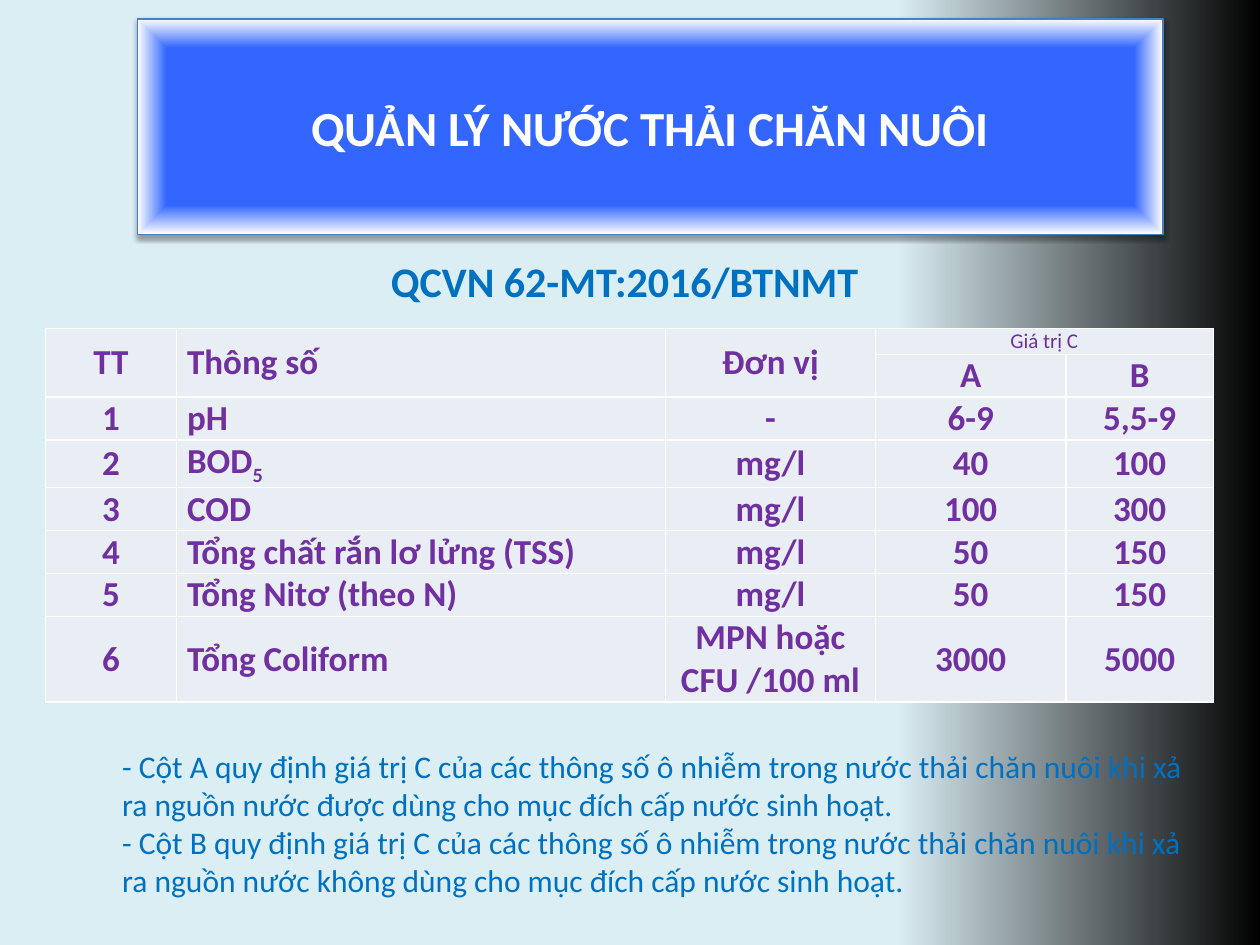
from dataclasses import dataclass

from lxml import etree
from pptx import Presentation
from pptx import util as u
from pptx.dml.color import RGBColor
from pptx.enum import text as t
from pptx.oxml import parse_xml
from pptx.oxml.ns import nsdecls, qn

CENTER, LEFT = t.PP_ALIGN.CENTER, t.PP_ALIGN.LEFT


@dataclass(frozen=True)
class Theme:
    font: str = "Calibri"
    sky: str = "DBEEF4"
    black: str = "000000"
    white: str = "FFFFFF"
    banner: str = "3366FF"
    outline: str = "4B7EBC"
    blue: str = "0070C0"
    purple: str = "7030A0"
    cell: str = "E9EDF4"
    title: int = 28
    subtitle: int = 24
    table: int = 20
    notes: int = 18
    small: int = 12


def apply(target, values):
    for name, value in values.items():
        setattr(target, name, value)


def element(xml):
    """Build a drawing element, declaring its namespace at the first space."""
    return parse_xml(xml.replace(" ", f" {nsdecls('a')} ", 1))


class SlideBuilder:
    def __init__(self, slide, theme):
        self.slide, self.theme = slide, theme

    def place(self, shape, box):
        """Position a shape and bring it to the front."""
        apply(shape, dict(zip(("left", "top", "width", "height"), map(u.Pt, box))))
        self.slide.shapes._spTree.append(shape._element)

    def add_words(self, para, words, size, color, bold=False, align=LEFT):
        """Fill a paragraph; text after an underscore becomes a subscript."""
        apply(para, {"alignment": align, "space_before": u.Pt(0)})
        for index, part in enumerate(words.split("_")):
            span = para.add_run()
            span.text = part
            apply(span.font, {"name": self.theme.font, "size": u.Pt(size), "bold": bold})
            span.font.color.rgb = RGBColor.from_string(color)
            if index:
                span._r.get_or_add_rPr().set("baseline", "-25000")

    def gradient(self, fill, stops):
        fill.gradient()
        for stop, (position, color) in zip(fill.gradient_stops, stops):
            stop.position = position
            stop.color.rgb = RGBColor.from_string(color)

    def background(self):
        fill = self.slide.background.fill
        self.gradient(fill, [(0.71, self.theme.sky), (1, self.theme.black)])
        fill.gradient_angle = 0

    def banner(self, words, box):
        """Turn the title placeholder into a glowing ellipse."""
        title = self.slide.shapes.title
        self.place(title, box)
        properties = title._element.spPr
        properties.append(element('<a:prstGeom prst="ellipse"><a:avLst/></a:prstGeom>'))
        self.gradient(title.fill, [(0.73, self.theme.banner), (1, self.theme.white)])
        linear = properties.find(".//" + qn("a:lin"))
        linear.getparent().replace(linear, element(
            '<a:path path="shape"><a:fillToRect l="50000" t="50000" r="50000" b="50000"/></a:path>'))
        title.line.width = u.Pt(0.75)
        title.line.color.rgb = RGBColor.from_string(self.theme.outline)
        properties.append(element(
            f'<a:effectLst ><a:outerShdw blurRad="{u.Pt(3.1)}" dist="{u.Pt(1.8)}" dir="5400000">'
            f'<a:srgbClr val="{self.theme.black}"><a:alpha val="35000"/></a:srgbClr>'
            '</a:outerShdw></a:effectLst>'))
        apply(title.text_frame, {"word_wrap": True, "auto_size": t.MSO_AUTO_SIZE.NONE,
                                 "vertical_anchor": t.MSO_ANCHOR.MIDDLE})
        self.add_words(title.text_frame.paragraphs[0], words, self.theme.title,
                       self.theme.white, True, CENTER)

    def subtitle(self, words, box):
        shape = self.slide.shapes.add_textbox(*map(u.Pt, box))
        apply(shape.text_frame, {"word_wrap": True,
                                 "auto_size": t.MSO_AUTO_SIZE.SHAPE_TO_FIT_TEXT})
        self.add_words(shape.text_frame.paragraphs[0], words, self.theme.subtitle,
                       self.theme.blue, True, CENTER)

    def notes(self, lines, box):
        body = self.slide.placeholders[1]
        self.place(body, box)
        frame = body.text_frame
        apply(frame, {"word_wrap": True, "auto_size": t.MSO_AUTO_SIZE.SHAPE_TO_FIT_TEXT})
        for index, line in enumerate(lines):
            para = frame.add_paragraph() if index else frame.paragraphs[0]
            self.add_words(para, line, self.theme.notes, self.theme.blue)
            settings = para._p.get_or_add_pPr()
            for name in ("marL", "indent"):
                settings.set(name, "0")
            etree.SubElement(settings, qn("a:buNone"))

    def style_cell(self, cell):
        apply(cell, {f"margin_{side}": 0 for side in ("left", "top", "right", "bottom")})
        cell.vertical_anchor = t.MSO_ANCHOR.MIDDLE
        properties = cell._tc.get_or_add_tcPr()
        for side in ("lnL", "lnR", "lnT", "lnB"):
            properties.append(element(
                f'<a:{side} w="{u.Pt(1)}"><a:solidFill><a:srgbClr val="{self.theme.white}"/>'
                f'</a:solidFill></a:{side}>'))
        cell.fill.solid()
        cell.fill.fore_color.rgb = RGBColor.from_string(self.theme.cell)

    def table(self, rows, box, widths, heights, merges):
        frame = self.slide.shapes.add_table(len(rows), len(widths), *map(u.Pt, box))
        table = frame.table
        apply(table, {"first_row": False, "horz_banding": False})
        for column, width in zip(table.columns, widths):
            column.width = u.Pt(width)
        for row, height in zip(table.rows, heights):
            row.height = u.Pt(height)
        frame.height = u.Pt(box[3])
        for r, row in enumerate(rows):
            for c, words in enumerate(row):
                cell = table.cell(r, c)
                self.style_cell(cell)
                if not words:
                    continue
                spanning = (r, c) == (0, 3)
                para = cell.text_frame.paragraphs[0]
                self.add_words(para, words, self.theme.small if spanning else self.theme.table,
                               self.theme.purple, not spanning, LEFT if c == 1 else CENTER)
                if c == 1:
                    para._p.get_or_add_pPr().set("marL", str(u.Pt(6)))
        for first, last in merges:
            table.cell(*first).merge(table.cell(*last))


LIMITS = [
    ("TT", "Thông số", "Đơn vị", "Giá trị C", ""),
    ("", "", "", "A", "B"),
    ("1", "pH", "-", "6-9", "5,5-9"),
    ("2", "BOD_5", "mg/l", "40", "100"),
    ("3", "COD", "mg/l", "100", "300"),
    ("4", "Tổng chất rắn lơ lửng (TSS)", "mg/l", "50", "150"),
    ("5", "Tổng Nitơ (theo N)", "mg/l", "50", "150"),
    ("6", "Tổng Coliform", "MPN hoặc CFU /100 ml", "3000", "5000"),
]
NOTES = [
    f"- Cột {column} quy định giá trị C của các thông số ô nhiễm trong nước thải chăn nuôi "
    f"khi xả ra nguồn nước {use} cho mục đích cấp nước sinh hoạt."
    for column, use in (("A", "được dùng"), ("B", "không dùng"))
]


def main():
    deck = Presentation()
    apply(deck, {"slide_width": u.Pt(720), "slide_height": u.Pt(540)})
    page = SlideBuilder(deck.slides.add_slide(deck.slide_layouts[1]), Theme())
    page.background()
    header_merges = [((0, c), (1, c)) for c in range(3)] + [((0, 3), (0, 4))]
    page.table(LIMITS, (26, 187.8, 667.4, 206.6), (74.9, 279.4, 120, 108.9, 84.2),
               [13.7] * 7 + [28], header_merges)
    page.notes(NOTES, (62.6, 423.4, 620.6, 116.6))
    page.subtitle("QCVN 62-MT:2016/BTNMT ", (193, 142.6, 333.4, 36))
    page.banner("QUẢN LÝ NƯỚC THẢI CHĂN NUÔI", (78.5, 10.8, 586.1, 123.1))
    deck.save("out.pptx")


if __name__ == "__main__":
    main()
